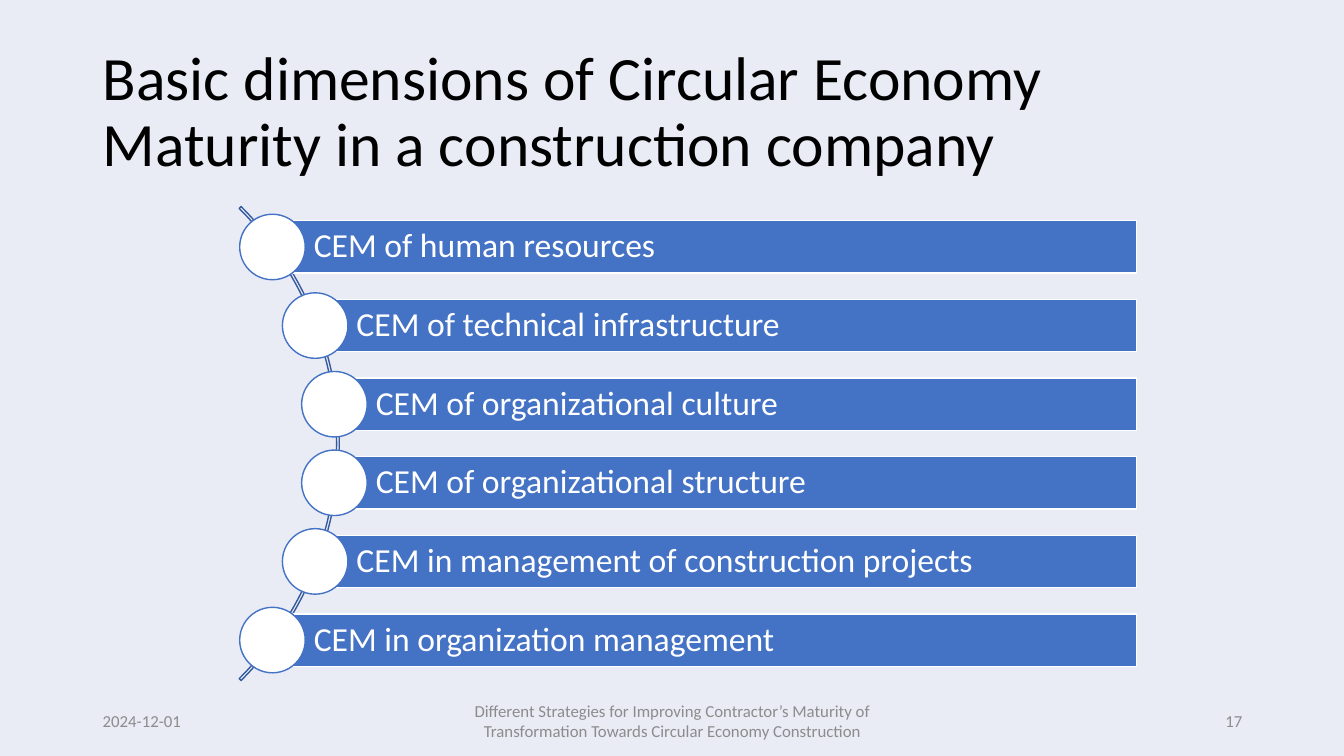
from dataclasses import dataclass
from math import sqrt

from pptx import Presentation
from pptx.dml.color import RGBColor
from pptx.enum.shapes import MSO_SHAPE
from pptx.enum.text import MSO_ANCHOR, PP_ALIGN
from pptx.shapes.autoshape import Shape
from pptx.slide import Slide
from pptx.util import Inches, Pt


@dataclass(frozen=True)
class Theme:
    font: str = "Calibri"
    background: str = "E9EBF5"
    ink: str = "000000"
    muted: str = "8C8C8C"
    accent: str = "4472C4"
    arc_line: str = "365B9D"
    white: str = "FFFFFF"
    title_size: int = 44
    label_size: int = 24
    footer_size: int = 12


@dataclass(frozen=True)
class Area:
    left: float
    top: float
    width: float
    height: float

    def lengths(self) -> tuple[int, ...]:
        return tuple(Inches(n) for n in (self.left, self.top, self.width, self.height))


@dataclass(frozen=True)
class Footer:
    text: str
    area: Area
    align: PP_ALIGN


THEME = Theme()

DIMENSIONS = (
    "CEM of human resources",
    "CEM of technical infrastructure",
    "CEM of organizational culture",
    "CEM of organizational structure",
    "CEM in management of construction projects",
    "CEM in organization management",
)

FOOTERS = (
    Footer("2024-12-01", Area(0.92, 6.95, 3, 0.4), PP_ALIGN.LEFT),
    Footer(
        "Different Strategies for Improving Contractor’s Maturity of "
        "Transformation Towards Circular Economy Construction",
        Area(4.42, 6.95, 4.5, 0.4),
        PP_ALIGN.CENTER,
    ),
    Footer("17", Area(9.42, 6.95, 3, 0.4), PP_ALIGN.RIGHT),
)

HUB_X, HUB_Y = 0.04, 4.4
ARC_SIZE = 6.65
CIRCLE_TRACK_RADIUS = 3.3
ROW_PITCH = 0.78
BAR_RIGHT, BAR_HEIGHT = 11.27, 0.52
CIRCLE_SIZE = 0.65


def write(box: Shape, text: str, *, size: int, color: str,
          align: PP_ALIGN = PP_ALIGN.LEFT, line_spacing: float = 1.0) -> None:
    frame = box.text_frame
    frame.word_wrap = True
    frame.vertical_anchor = MSO_ANCHOR.MIDDLE
    para = frame.paragraphs[0]
    para.alignment = align
    para.line_spacing = line_spacing
    span = para.add_run()
    span.text = text
    span.font.name = THEME.font
    span.font.size = Pt(size)
    span.font.color.rgb = RGBColor.from_string(color)


def add_outlined(page: Slide, kind: MSO_SHAPE, area: Area, line: str,
                 fill: str | None = None) -> Shape:
    shape = page.shapes.add_shape(kind, *area.lengths())
    shape.shadow.inherit = False
    if fill is None:
        shape.fill.background()
    else:
        shape.fill.solid()
        shape.fill.fore_color.rgb = RGBColor.from_string(fill)
    shape.line.color.rgb = RGBColor.from_string(line)
    shape.line.width = Pt(1)
    return shape


def add_arc(page: Slide) -> None:
    area = Area(HUB_X - ARC_SIZE / 2, HUB_Y - ARC_SIZE / 2, ARC_SIZE, ARC_SIZE)
    arc = add_outlined(page, MSO_SHAPE.BLOCK_ARC, area, THEME.arc_line)
    for index, value in enumerate((189, 27, 0.004)):
        arc.adjustments[index] = value


def add_dimension(page: Slide, index: int, label: str) -> None:
    """Draw a bar and its circle, centred on the curve around the hub."""
    offset = (index - (len(DIMENSIONS) - 1) / 2) * ROW_PITCH
    x = HUB_X + sqrt(CIRCLE_TRACK_RADIUS**2 - offset**2)
    y = HUB_Y + offset
    bar_area = Area(x, y - BAR_HEIGHT / 2, BAR_RIGHT - x, BAR_HEIGHT)
    bar = add_outlined(page, MSO_SHAPE.RECTANGLE, bar_area, THEME.white, THEME.accent)
    frame = bar.text_frame
    frame.margin_left = Inches(0.41)
    frame.margin_top = frame.margin_right = frame.margin_bottom = Inches(0.07)
    write(bar, label, size=THEME.label_size, color=THEME.white, line_spacing=0.9)
    radius = CIRCLE_SIZE / 2
    circle_area = Area(x - radius, y - radius, CIRCLE_SIZE, CIRCLE_SIZE)
    add_outlined(page, MSO_SHAPE.OVAL, circle_area, THEME.accent, THEME.white)


def main() -> None:
    deck = Presentation()
    deck.slide_width, deck.slide_height = Inches(13.33), Inches(7.5)
    page = deck.slides.add_slide(deck.slide_layouts[6])
    page.background.fill.solid()
    page.background.fill.fore_color.rgb = RGBColor.from_string(THEME.background)

    title = page.shapes.add_textbox(*Area(0.92, 0.4, 11.7, 1.45).lengths())
    write(title, "Basic dimensions of Circular Economy Maturity in a construction company",
          size=THEME.title_size, color=THEME.ink, line_spacing=0.9)
    for footer in FOOTERS:
        box = page.shapes.add_textbox(*footer.area.lengths())
        write(box, footer.text, size=THEME.footer_size, color=THEME.muted,
              align=footer.align)
    add_arc(page)
    for index, label in enumerate(DIMENSIONS):
        add_dimension(page, index, label)
    deck.save("out.pptx")


if __name__ == "__main__":
    main()
